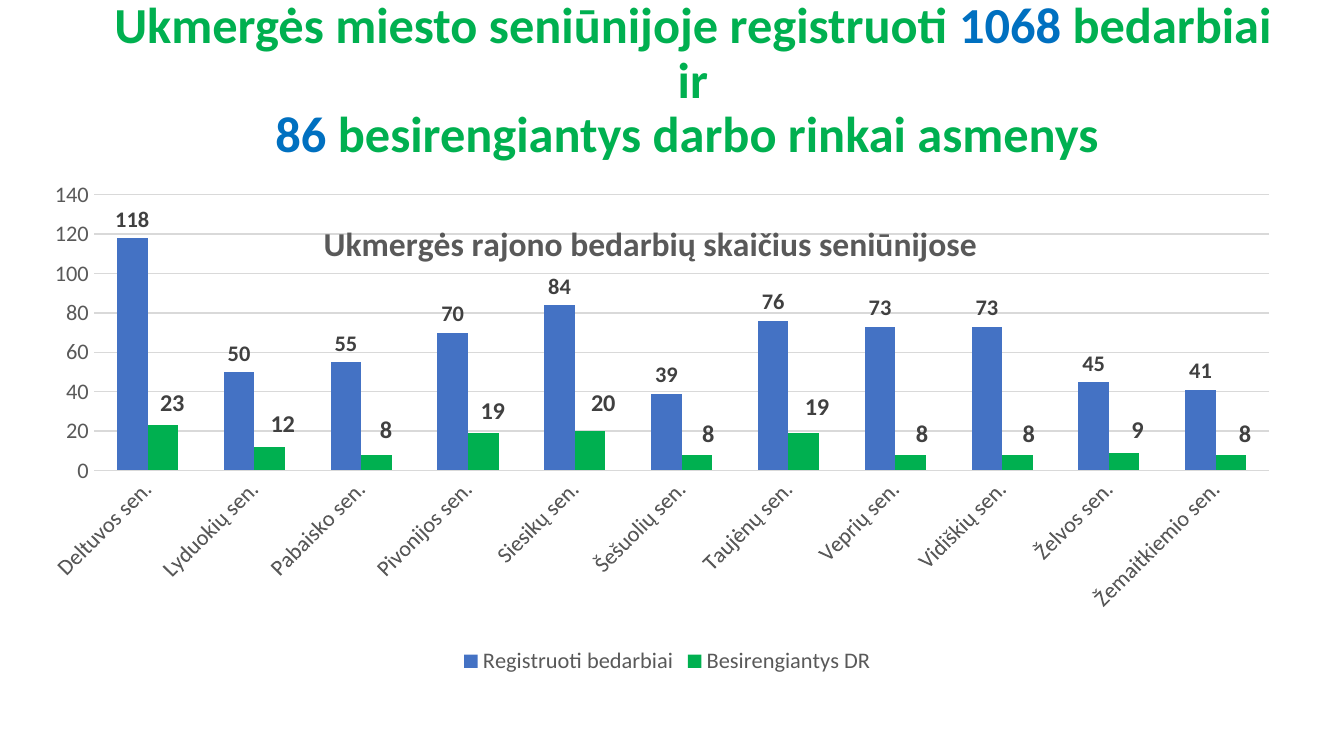
from lxml import etree
from pptx import Presentation
from pptx.chart import data as chart_data
from pptx.dml.color import RGBColor
from pptx.enum import chart as kinds, text
from pptx.oxml import ns
from pptx.util import Pt

FONT = "Calibri"
GREEN = RGBColor(0x00, 0xB0, 0x50)
BLUE = RGBColor(0x00, 0x70, 0xC0)
BAR_BLUE = RGBColor(0x44, 0x72, 0xC4)
GREY = RGBColor(0x59, 0x59, 0x59)
LABEL_GREY = RGBColor(0x40, 0x40, 0x40)
GRID_GREY = RGBColor(0xD9, 0xD9, 0xD9)

TITLE_BOX = (49.7, 13.7, 643, 60.5)
CHART_BOX = (23, 97.2, 669, 267)

WARDS = ["Deltuvos sen.", "Lyduokių sen.", "Pabaisko sen.", "Pivonijos sen.",
         "Siesikų sen.", "Šešuolių sen.", "Taujėnų sen.", "Veprių sen.",
         "Vidiškių sen.", "Želvos sen.", "Žemaitkiemio sen."]
REGISTERED = [118, 50, 55, 70, 84, 39, 76, 73, 73, 45, 41]
PREPARING = [23, 12, 8, 19, 20, 8, 19, 8, 8, 9, 8]
LABEL_SHIFTS = [(5, -1), (7, -1), (5, -2), (5, -1), (7, -4), (6, 0),
                (7, -3), (6, 0), (6, 0), (7, -1), (7.5, 0)]


def format_font(font, size, color, bold=False):
    font.name = FONT
    font.size = Pt(size)
    font.bold = bold
    font.color.rgb = color


def add_span(para, words, size=12, color=GREY, bold=False):
    span = para.add_run()
    span.text = words
    format_font(span.font, size, color, bold)


def make_layout(**settings):
    layout = etree.Element(ns.qn("c:layout"))
    manual = etree.SubElement(layout, ns.qn("c:manualLayout"))
    for name, value in settings.items():
        etree.SubElement(manual, ns.qn(f"c:{name}")).set("val", str(value))
    return layout


def place_title(slide, box):
    title = slide.shapes.title
    title.left, title.top, title.width, title.height = map(Pt, box)
    frame = title.text_frame
    frame.auto_size = text.MSO_AUTO_SIZE.NONE
    frame.vertical_anchor = text.MSO_ANCHOR.MIDDLE
    para = frame.paragraphs[0]
    para.alignment = text.PP_ALIGN.CENTER
    para.line_spacing = 0.9
    style = {"size": 27, "bold": True}
    add_span(para, "Ukmergės miesto seniūnijoje registruoti ", color=GREEN, **style)
    add_span(para, "1068", color=BLUE, **style)
    add_span(para, " bedarbiai ir", color=GREEN, **style)
    para.add_line_break()
    add_span(para, "86", color=BLUE, **style)
    add_span(para, " besirengiantys darbo rinkai asmenys ", color=GREEN, **style)


def format_axes(chart):
    for axis in (chart.category_axis, chart.value_axis):
        axis.major_tick_mark = kinds.XL_TICK_MARK.NONE
        axis.minor_tick_mark = kinds.XL_TICK_MARK.NONE
        axis.format.line.fill.background()
        format_font(axis.tick_labels.font, 12, GREY)
    category_body = chart.category_axis._element.find(".//" + ns.qn("a:bodyPr"))
    category_body.set("rot", "-2700000")
    category_body.set("vert", "horz")
    values = chart.value_axis
    values.minimum_scale, values.maximum_scale, values.major_unit = 0, 140, 20
    grid = values.major_gridlines.format.line
    grid.color.rgb = GRID_GREY
    grid.width = Pt(0.75)


def format_series(series, color, label_size):
    series.format.fill.solid()
    series.format.fill.fore_color.rgb = color
    labels = series.data_labels
    labels.show_value = True
    labels.position = kinds.XL_LABEL_POSITION.OUTSIDE_END
    format_font(labels.font, label_size, LABEL_GREY, bold=True)


def shift_labels(series, shifts, width, height):
    for index in range(len(shifts)):
        label = series.points[index].data_label
        label.position = kinds.XL_LABEL_POSITION.OUTSIDE_END
        format_font(label.font, 13, LABEL_GREY, bold=True)
    entries = series._element.findall(".//" + ns.qn("c:dLbl"))
    for entry, (right, down) in zip(entries, shifts):
        layout = make_layout(x=round(right / width, 4), y=round(down / height, 4))
        entry.find(ns.qn("c:idx")).addnext(layout)


def place_chart_title(chart):
    para = chart.chart_title.text_frame.paragraphs[0]
    add_span(para, "Ukmergės rajono bedarbių skaičius seniūnijose", size=18, bold=True)
    title = chart.chart_title._element
    for old in title.findall(ns.qn("c:layout")):
        title.remove(old)
    title.find(ns.qn("c:tx")).addnext(
        make_layout(xMode="edge", yMode="edge", x=0.22, y=0.06))
    title.find(ns.qn("c:overlay")).set("val", "1")


def place_chart(slide, box):
    table = chart_data.CategoryChartData()
    table.categories = WARDS
    table.add_series("Registruoti bedarbiai", REGISTERED)
    table.add_series("Besirengiantys DR", PREPARING)
    chart = slide.shapes.add_chart(
        kinds.XL_CHART_TYPE.COLUMN_CLUSTERED, *map(Pt, box), table).chart
    chart.font.name = FONT
    chart.font.size = Pt(10)
    plot = chart.plots[0]
    plot.vary_by_categories = False
    plot.gap_width = 150
    plot.overlap = 0
    registered, preparing = plot.series
    format_series(registered, BAR_BLUE, 12)
    format_series(preparing, GREEN, 13)
    shift_labels(preparing, LABEL_SHIFTS, *box[2:])
    format_axes(chart)
    place_chart_title(chart)
    chart.has_legend = True
    chart.legend.position = kinds.XL_LEGEND_POSITION.BOTTOM
    chart.legend.include_in_layout = False
    format_font(chart.legend.font, 12, GREY)
    area = chart._chartSpace.find(".//" + ns.qn("c:plotArea"))
    for old in area.findall(ns.qn("c:layout")):
        area.remove(old)
    area.insert(0, make_layout(layoutTarget="inner", xMode="edge", yMode="edge",
                               x=0.041, y=0.019, w=0.941, h=0.558))


def main():
    deck = Presentation()
    deck.slide_width, deck.slide_height = Pt(720), Pt(405)
    slide = deck.slides.add_slide(deck.slide_layouts.get_by_name("Title Only"))
    place_title(slide, TITLE_BOX)
    place_chart(slide, CHART_BOX)
    deck.save("out.pptx")


if __name__ == "__main__":
    main()
